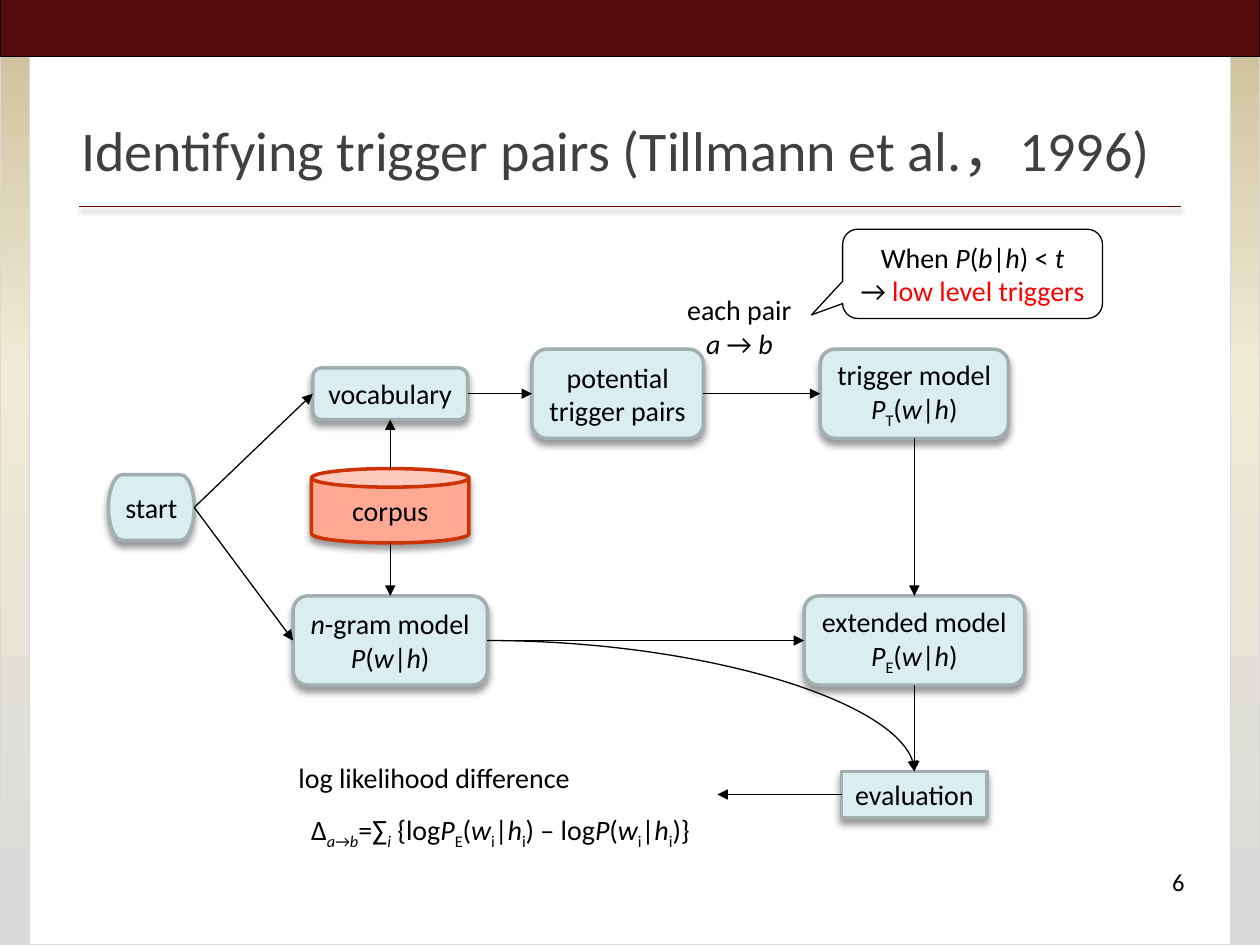
from copy import deepcopy

from lxml.etree import SubElement
from pptx import Presentation
from pptx.dml.color import RGBColor
from pptx.enum.shapes import MSO_CONNECTOR, MSO_SHAPE
from pptx.enum.text import MSO_ANCHOR, PP_ALIGN
from pptx.oxml.ns import qn
from pptx.util import Pt

FONT = "Calibri"
BLACK = RGBColor(0x00, 0x00, 0x00)
WHITE = RGBColor(0xFF, 0xFF, 0xFF)
RED = RGBColor(0xFF, 0x00, 0x00)
GRAY = RGBColor(0x40, 0x40, 0x40)
SILVER = RGBColor(0xD9, 0xD9, 0xD9)
CREAM = RGBColor(0xF0, 0xEB, 0xD5)
TAN = RGBColor(0xD1, 0xC3, 0x9F)
MAROON = RGBColor(0x55, 0x0B, 0x0B)
RULE = RGBColor(0x6C, 0x00, 0x00)
NODE_FILL = RGBColor(0xDA, 0xED, 0xEF)
NODE_LINE = RGBColor(0xA1, 0xAF, 0xB1)
CORPUS_FILL = RGBColor(0xFF, 0xA8, 0x93)
CORPUS_LINE = RGBColor(0xCC, 0x33, 0x00)

TOP, LEFT, BOTTOM, RIGHT = range(4)


def add_text(sp, text, size=16, color=BLACK, align=PP_ALIGN.CENTER,
             anchor=MSO_ANCHOR.MIDDLE, wrap=False, spacing=None):
    """Fill a shape: *..* is italic, ~..~ is subscript, ^..^ is red."""
    tf = sp.text_frame
    tf.word_wrap = wrap
    tf.vertical_anchor = anchor
    for i, line in enumerate(text.split("\n")):
        p = tf.paragraphs[0] if i == 0 else tf.add_paragraph()
        p.alignment = align
        p.line_spacing = spacing
        on = {"*": False, "~": False, "^": False}
        run = ""
        for ch in line + "\0":
            if ch not in on and ch != "\0":
                run += ch
                continue
            if run:
                r = p.add_run()
                r.text = run
                r.font.name, r.font.size = FONT, Pt(size)
                r.font.italic = on["*"]
                r.font.color.rgb = RED if on["^"] else color
                if on["~"]:
                    r.font._element.set("baseline", "-25000")
                run = ""
            if ch in on:
                on[ch] = not on[ch]


def add_shadow(effects, blur, dist, alpha):
    shadow = SubElement(effects, qn("a:outerShdw"), blurRad=str(Pt(blur)),
                        dist=str(Pt(dist)), dir="5400000", rotWithShape="0")
    clr = SubElement(shadow, qn("a:srgbClr"), val=str(BLACK))
    SubElement(clr, qn("a:alpha"), val=str(alpha * 1000))


def add_box(s, kind, box, fill=None, line=BLACK, width=0.75):
    sp = s.shapes.add_shape(kind, *map(Pt, box))
    if fill is None:
        sp.fill.background()
    else:
        sp.fill.solid()
        sp.fill.fore_color.rgb = fill
    sp.line.color.rgb = line
    sp.line.width = Pt(width)
    sp.shadow.inherit = False
    return sp


def add_label(s, box, text, **fmt):
    sp = s.shapes.add_textbox(*map(Pt, box))
    add_text(sp, text, **fmt)
    return sp


def add_node(s, center, size, text, kind=MSO_SHAPE.ROUNDED_RECTANGLE,
             fill=NODE_FILL, line=NODE_LINE):
    (cx, cy), (w, h) = center, size
    sp = add_box(s, kind, (cx - w / 2, cy - h / 2, w, h), fill, line, 2)
    add_shadow(sp._element.spPr.find(qn("a:effectLst")), 4, 3, 40)
    add_text(sp, text)
    return sp


def add_line(s, start, end, color=BLACK, width=0.75, arrow=True,
             kind=MSO_CONNECTOR.STRAIGHT):
    """Draw a connector between points or (shape, side) pairs."""
    joined = [hasattr(a, "shape_id") for a, _ in (start, end)]
    points = [(0, 0) if j else map(Pt, e) for j, e in zip(joined, (start, end))]
    cn = s.shapes.add_connector(kind, *points[0], *points[1])
    if joined[0]:
        cn.begin_connect(*start)
    if joined[1]:
        cn.end_connect(*end)
    cn.line.color.rgb = color
    cn.line.width = Pt(width)
    if arrow:
        SubElement(cn.line._get_or_add_ln(), qn("a:tailEnd"), type="triangle")
    SubElement(cn._element.spPr, qn("a:effectLst"))
    return cn


def add_frame(s, w, h):
    """Gradient side bands, white page, top band and title rule."""
    bands = add_box(s, MSO_SHAPE.RECTANGLE, (0, 32, w, h - 32), SILVER, SILVER)
    bands.fill.gradient()
    bands.fill.gradient_angle = 90
    stops = bands._element.spPr.find(".//" + qn("a:gsLst"))
    stops.append(deepcopy(stops[0]))
    colors = ((0, SILVER), (0.65, CREAM), (1, TAN))
    for stop, (pos, color) in zip(bands.fill.gradient_stops, colors):
        stop.position = pos
        stop.color.rgb = color
    add_box(s, MSO_SHAPE.RECTANGLE, (16.75, 28, w - 33.5, h - 28), WHITE, SILVER)
    add_box(s, MSO_SHAPE.RECTANGLE, (0, -0.5, w, 33), MAROON)
    rule = add_line(s, (45, 118), (w - 45, 118), RULE, 1, arrow=False)
    add_shadow(rule._element.spPr.find(qn("a:effectLst")), 3.1, 1.6, 38)


def add_flowchart(s, x, y):
    """Flowchart whose start node is centred on (x, y)."""
    corpus_x, pairs_x, model_x = x + 136.5, x + 266.5, x + 436
    top_y, model_y, eval_y = y - 65, y + 76, y + 164

    start = add_node(s, (x, y), (49, 37.5), "start",
                     MSO_SHAPE.FLOWCHART_TERMINATOR)
    add_node(s, (corpus_x, y - 1), (90, 42.5), "corpus", MSO_SHAPE.CAN,
             CORPUS_FILL, CORPUS_LINE)
    vocabulary = add_node(s, (corpus_x, top_y), (88.5, 29.5), "vocabulary")
    ngram = add_node(s, (corpus_x, model_y), (111, 51),
                     "*n*-gram model\n*P*(*w*|*h*)")
    pairs = add_node(s, (pairs_x, top_y), (98, 51), "potential\ntrigger pairs")
    trigger = add_node(s, (model_x, top_y), (107.5, 51),
                       "trigger model\n*P*~T~(*w*|*h*)")
    extended = add_node(s, (model_x, model_y), (126, 51),
                        "extended model\n*P*~E~(*w*|*h*)")
    evaluation = add_node(s, (model_x, eval_y), (83, 26.5), "evaluation",
                          MSO_SHAPE.RECTANGLE)
    result = add_label(
        s, (x + 77, eval_y - 32.75, 246.5, 65.5),
        "log likelihood difference\n"
        "Δ~*a*→*b*~=∑~*i*~ {log*P*~E~(*w*~i~|*h*~i~) – log*P*(*w*~i~|*h*~i~)}",
        align=PP_ALIGN.LEFT, anchor=MSO_ANCHOR.TOP, wrap=True, spacing=1.5)
    formula = result.text_frame.paragraphs[1]
    formula._p.get_or_add_pPr().set("marL", str(Pt(7.25)))
    add_label(s, (x + 298.5, top_y - 61.5, 75, 46),
              "each pair\n*a *→ *b*")

    for begin, end in (
        ((start, RIGHT), (vocabulary, LEFT)),
        ((start, RIGHT), (ngram, LEFT)),
        ((corpus_x, y - 22.25), (vocabulary, BOTTOM)),
        ((corpus_x, y + 20.25), (ngram, TOP)),
        ((vocabulary, RIGHT), (pairs, LEFT)),
        ((pairs, RIGHT), (trigger, LEFT)),
        ((trigger, BOTTOM), (extended, TOP)),
        ((ngram, RIGHT), (extended, LEFT)),
        ((extended, BOTTOM), (evaluation, TOP)),
        ((evaluation, LEFT), (result, RIGHT)),
    ):
        add_line(s, begin, end)
    curve = add_line(s, (corpus_x + 55.5, model_y), (model_x, eval_y - 13.25),
                     kind=MSO_CONNECTOR.CURVE)
    curve._element.spPr.find(qn("a:prstGeom")).set("prst", "curvedConnector2")


def add_callout(s, box):
    sp = add_box(s, MSO_SHAPE.ROUNDED_RECTANGULAR_CALLOUT, box)
    for i, value in enumerate((-0.62, 0.46, 0.17)):
        sp.adjustments[i] = value
    add_text(sp, "When* P*(*b*|*h*) < *t*\n→ ^low level triggers^")


def main():
    prs = Presentation()
    prs.slide_width, prs.slide_height = Pt(720), Pt(540)
    s = prs.slides.add_slide(prs.slide_layouts[6])
    add_frame(s, 720, 540)
    add_label(s, (39.5, 62, 641.5, 46),
              "Identifying trigger pairs (Tillmann et al.，1996)",
              size=32, color=GRAY, align=PP_ALIGN.LEFT, wrap=True)
    add_flowchart(s, 86.5, 290)
    add_callout(s, (481.5, 131, 148.5, 51))
    add_label(s, (516, 492, 168, 37.5), "6", size=14, align=PP_ALIGN.RIGHT,
              anchor=MSO_ANCHOR.TOP, wrap=True)
    prs.save("out.pptx")


if __name__ == "__main__":
    main()
